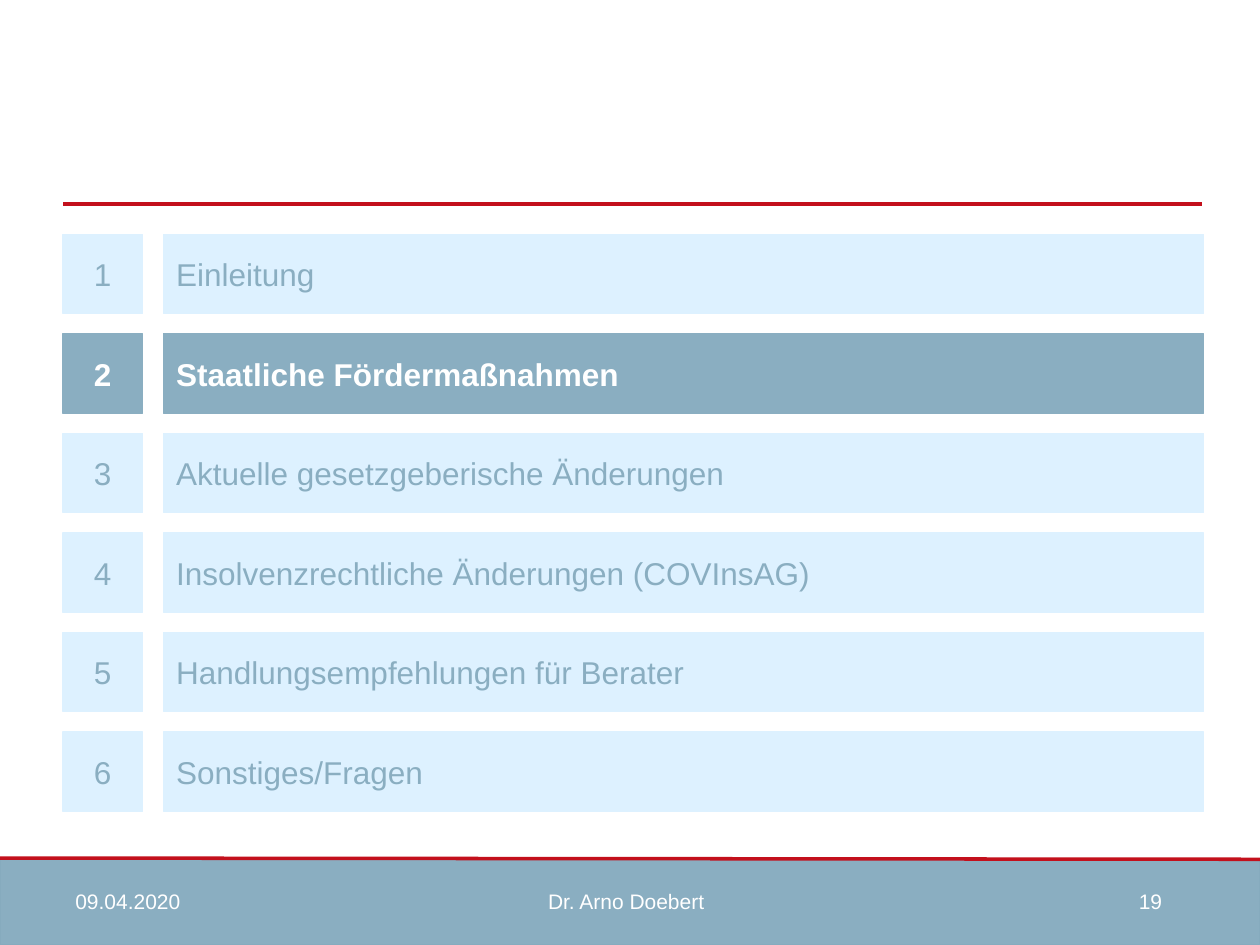
from dataclasses import dataclass

from lxml import etree
from pptx import Presentation
from pptx.dml.color import RGBColor
from pptx.enum.shapes import MSO_CONNECTOR, MSO_SHAPE
from pptx.enum.text import MSO_ANCHOR, PP_ALIGN
from pptx.oxml.ns import qn
from pptx.util import Inches, Pt

RECT = MSO_SHAPE.RECTANGLE
LINE = MSO_CONNECTOR.STRAIGHT
MIDDLE = MSO_ANCHOR.MIDDLE
LEFT, CENTER = PP_ALIGN.LEFT, PP_ALIGN.CENTER

WHITE = RGBColor(0xFF, 0xFF, 0xFF)
BLUE = RGBColor(0x8A, 0xAE, 0xC1)
EDGE = RGBColor(0x86, 0xAB, 0xBE)
PALE = RGBColor(0xDD, 0xF1, 0xFF)
RED = RGBColor(0xC3, 0x10, 0x1C)

FONT = "Arial"
TOP, STEP, SIDE = 1.86, 0.79, 0.63


@dataclass
class Item:
    text: str
    active: bool = False


@dataclass
class Note:
    text: str
    left: float
    width: float
    align: PP_ALIGN = LEFT


ITEMS = [
    Item("Einleitung"),
    Item("Staatliche Fördermaßnahmen", active=True),
    Item("Aktuelle gesetzgeberische Änderungen"),
    Item("Insolvenzrechtliche Änderungen (COVInsAG)"),
    Item("Handlungsempfehlungen für Berater"),
    Item("Sonstiges/Fragen"),
]

NOTES = [
    Note("09.04.2020", 0.5, 1.27),
    Note("Dr. Arno Doebert", 3.16, 3.62, CENTER),
    Note("19", 8.94, 0.56),
]


def add_text(shape, text: str, size: int, color: RGBColor,
             align: PP_ALIGN, bold: bool = False) -> None:
    frame = shape.text_frame
    frame.word_wrap = True
    frame.vertical_anchor = MIDDLE
    para = frame.paragraphs[0]
    para.alignment = align
    run = para.add_run()
    run.text = text
    run.font.name = FONT
    run.font.size = Pt(size)
    run.font.bold = bold
    run.font.color.rgb = color


def add_box(slide, left: float, top: float, width: float, height: float,
            fill: RGBColor, edge: RGBColor):
    box = slide.shapes.add_shape(
        RECT, Inches(left), Inches(top), Inches(width), Inches(height))
    box.shadow.inherit = False
    box.fill.solid()
    box.fill.fore_color.rgb = fill
    box.line.color.rgb = edge
    box.line.width = Pt(0.75)
    return box


def add_rule(slide, x1: float, y1: float, x2: float, y2: float) -> None:
    rule = slide.shapes.add_connector(
        LINE, Inches(x1), Inches(y1), Inches(x2), Inches(y2))
    rule.line.color.rgb = RED
    rule.line.width = Pt(2)
    etree.SubElement(rule._element.spPr, qn("a:effectLst"))


def add_item(slide, index: int, item: Item) -> None:
    top = TOP + index * STEP
    fill, color = (BLUE, WHITE) if item.active else (PALE, BLUE)
    cells = [(0.5, SIDE, str(index + 1), CENTER), (1.3, 8.25, item.text, LEFT)]
    for left, width, text, align in cells:
        box = add_box(slide, left, top, width, SIDE, fill, fill)
        add_text(box, text, 18, color, align, item.active)


def add_note(slide, note: Note) -> None:
    box = slide.shapes.add_textbox(
        Inches(note.left), Inches(6.95), Inches(note.width), Inches(0.4))
    add_text(box, note.text, 12, WHITE, note.align)


def main() -> None:
    deck = Presentation()
    deck.slide_width = Inches(10)
    deck.slide_height = Inches(7.5)
    slide = deck.slides.add_slide(deck.slide_layouts[6])

    # Footer band and red rules
    add_box(slide, 0, 6.82, 10, 0.68, BLUE, EDGE)
    add_rule(slide, 0, 6.81, 10, 6.82)
    add_rule(slide, 0.5, 1.62, 9.54, 1.62)

    # Agenda rows
    for index, item in enumerate(ITEMS):
        add_item(slide, index, item)

    # Footer texts
    for note in NOTES:
        add_note(slide, note)

    deck.save("out.pptx")


if __name__ == "__main__":
    main()
